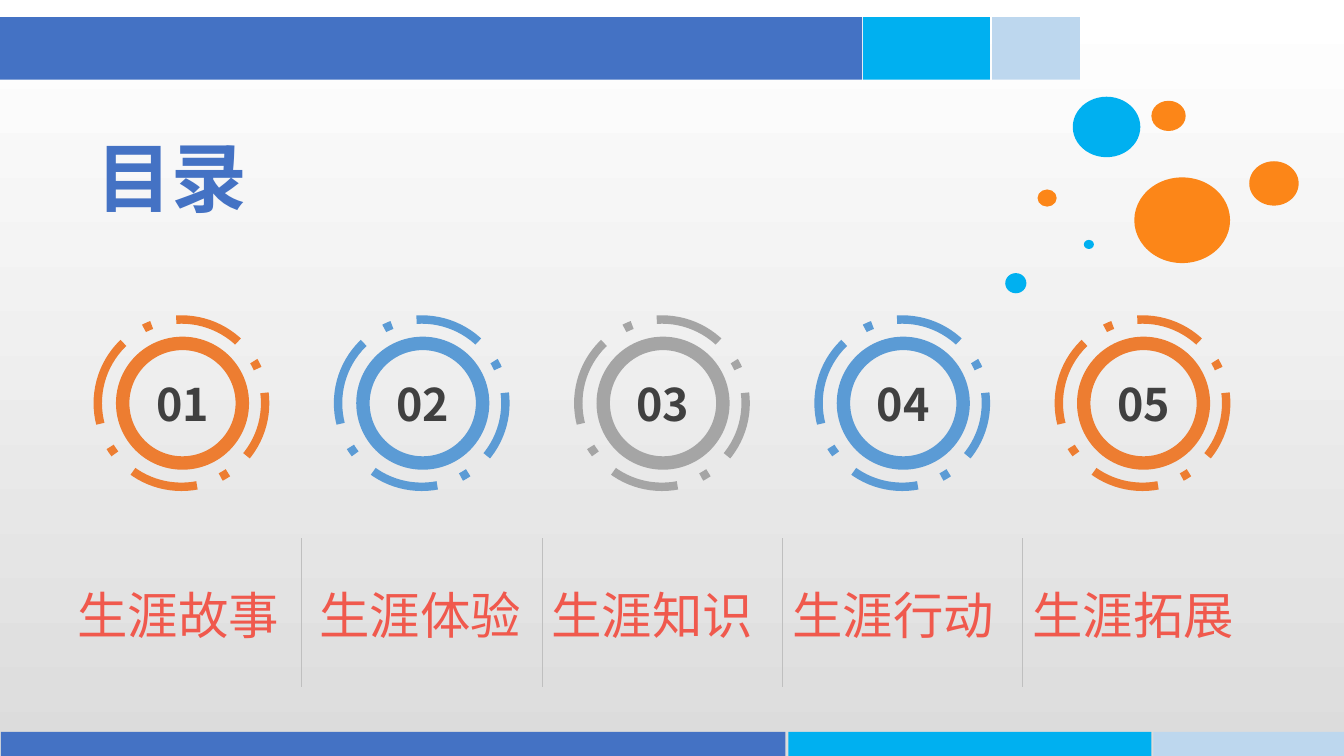
"""Build a contents slide with five numbered career topics."""
from lxml.etree import SubElement
from pptx import Presentation
from pptx.dml.color import RGBColor
from pptx.enum.dml import MSO_LINE
from pptx.enum.shapes import MSO_CONNECTOR, MSO_SHAPE
from pptx.enum.text import MSO_ANCHOR, PP_ALIGN
from pptx.oxml.ns import qn
from pptx.util import Inches, Pt

WHITE = RGBColor(0xFF, 0xFF, 0xFF)
SILVER = RGBColor(0xDC, 0xDC, 0xDC)
BLUE = RGBColor(0x44, 0x72, 0xC4)
CYAN = RGBColor(0x00, 0xB0, 0xF0)
PALE = RGBColor(0xBD, 0xD7, 0xEE)
AMBER = RGBColor(0xFC, 0x86, 0x18)
ORANGE = RGBColor(0xED, 0x7D, 0x31)
SKY = RGBColor(0x5B, 0x9B, 0xD5)
GRAY = RGBColor(0xA5, 0xA5, 0xA5)
DARK = RGBColor(0x40, 0x40, 0x40)
RULE = RGBColor(0xBF, 0xBF, 0xBF)
RED = RGBColor(0xF0, 0x59, 0x4D)
HAN = "Noto Sans CJK SC"

BARS = [
    (0, 0.17, 8.55, 0.62, BLUE),
    (8.56, 0.17, 1.26, 0.62, CYAN),
    (9.84, 0.17, 0.87, 0.62, PALE),
    (0.01, 7.26, 7.78, 0.24, BLUE),
    (7.82, 7.26, 3.6, 0.24, CYAN),
    (11.44, 7.26, 1.89, 0.24, PALE),
]
DOTS = [
    (9.97, 2.71, 0.21, 0.2, CYAN),
    (11.25, 1.76, 0.95, 0.85, AMBER),
    (10.64, 0.96, 0.67, 0.6, CYAN),
    (12.39, 1.6, 0.49, 0.44, AMBER),
    (11.42, 1, 0.34, 0.3, AMBER),
    (10.29, 1.88, 0.19, 0.17, AMBER),
    (10.75, 2.38, 0.1, 0.09, CYAN),
]
TOPICS = [
    ("生涯故事", ORANGE, 0.67, 2.45),
    ("生涯体验", SKY, 3.07, 2.5),
    ("生涯知识", GRAY, 5.37, 2.38),
    ("生涯行动", SKY, 7.76, 2.25),
    ("生涯拓展", ORANGE, 10.14, 2.23),
]
STEP = 2.383


def write(frame, text, size, color, font=HAN, bold=False,
          align=PP_ALIGN.LEFT, space=None):
    """Put one formatted paragraph into a text frame."""
    frame.word_wrap = True
    frame.vertical_anchor = MSO_ANCHOR.MIDDLE
    para = frame.paragraphs[0]
    para.alignment = align
    if space:
        para.line_spacing = space
    run = para.add_run()
    run.text = text
    run.font.size = Pt(size)
    run.font.bold = bold
    run.font.name = font
    run.font.color.rgb = color
    SubElement(run.font._element, qn("a:ea"), typeface=HAN)


class Deck:
    """Hold the slide and draw its elements in one style."""

    def __init__(self):
        """Create a wide slide with a shaded background."""
        self.file = Presentation()
        self.file.slide_width = Inches(13.33)
        self.file.slide_height = Inches(7.5)
        self.slide = self.file.slides.add_slide(self.file.slide_layouts[6])
        self.shapes = self.slide.shapes
        fill = self.slide.background.fill
        fill.gradient()
        fill.gradient_angle = 270
        for stop, color in zip(fill.gradient_stops, (WHITE, SILVER)):
            stop.color.rgb = color

    def shape(self, kind, left, top, width, height, color):
        """Add a flat filled shape."""
        item = self.shapes.add_shape(
            kind, Inches(left), Inches(top), Inches(width), Inches(height))
        item.shadow.inherit = False
        item.fill.solid()
        item.fill.fore_color.rgb = color
        item.line.fill.background()
        return item

    def badge(self, left, text, color):
        """Add a numbered donut inside a dashed ring."""
        donut = self.shape(MSO_SHAPE.DONUT, left, 3.34, 1.32, 1.32, color)
        donut.adjustments[0] = 0.101
        write(donut.text_frame, text, 32, DARK, bold=True,
              align=PP_ALIGN.CENTER)
        ring = self.shape(
            MSO_SHAPE.OVAL, left - 0.18, 3.17, 1.66, 1.66, color)
        ring.fill.background()
        ring.line.color.rgb = color
        ring.line.width = Pt(6)
        ring.line.dash_style = MSO_LINE.LONG_DASH_DOT

    def rule(self, left):
        """Add a thin upright divider."""
        line = self.shapes.add_connector(
            MSO_CONNECTOR.STRAIGHT,
            Inches(left), Inches(5.34), Inches(left), Inches(6.82))
        line.line.color.rgb = RULE
        line.line.width = Pt(0.25)
        SubElement(line._element.spPr, qn("a:effectLst"))

    def label(self, left, top, width, height, text, **style):
        """Add a text box."""
        box = self.shapes.add_textbox(
            Inches(left), Inches(top), Inches(width), Inches(height))
        write(box.text_frame, text, **style)


def main():
    """Draw the slide and save it."""
    deck = Deck()
    for bar in BARS:
        deck.shape(MSO_SHAPE.RECTANGLE, *bar)
    for dot in DOTS:
        deck.shape(MSO_SHAPE.OVAL, *dot)
    for index, (_, color, _, _) in enumerate(TOPICS):
        deck.badge(1.15 + index * STEP, f"{index + 1:02}", color)
    for index in range(len(TOPICS) - 1):
        deck.rule(2.99 + index * STEP)
    deck.label(0.34, 1.3, 2.73, 1.02, "目录", size=54, color=BLUE,
               bold=True, align=PP_ALIGN.CENTER, space=0.9)
    for text, _, left, width in TOPICS:
        deck.label(left, 5.64, width, 0.9, text, size=36, color=RED,
                   font="Arial")
    deck.file.save("out.pptx")


if __name__ == "__main__":
    main()
